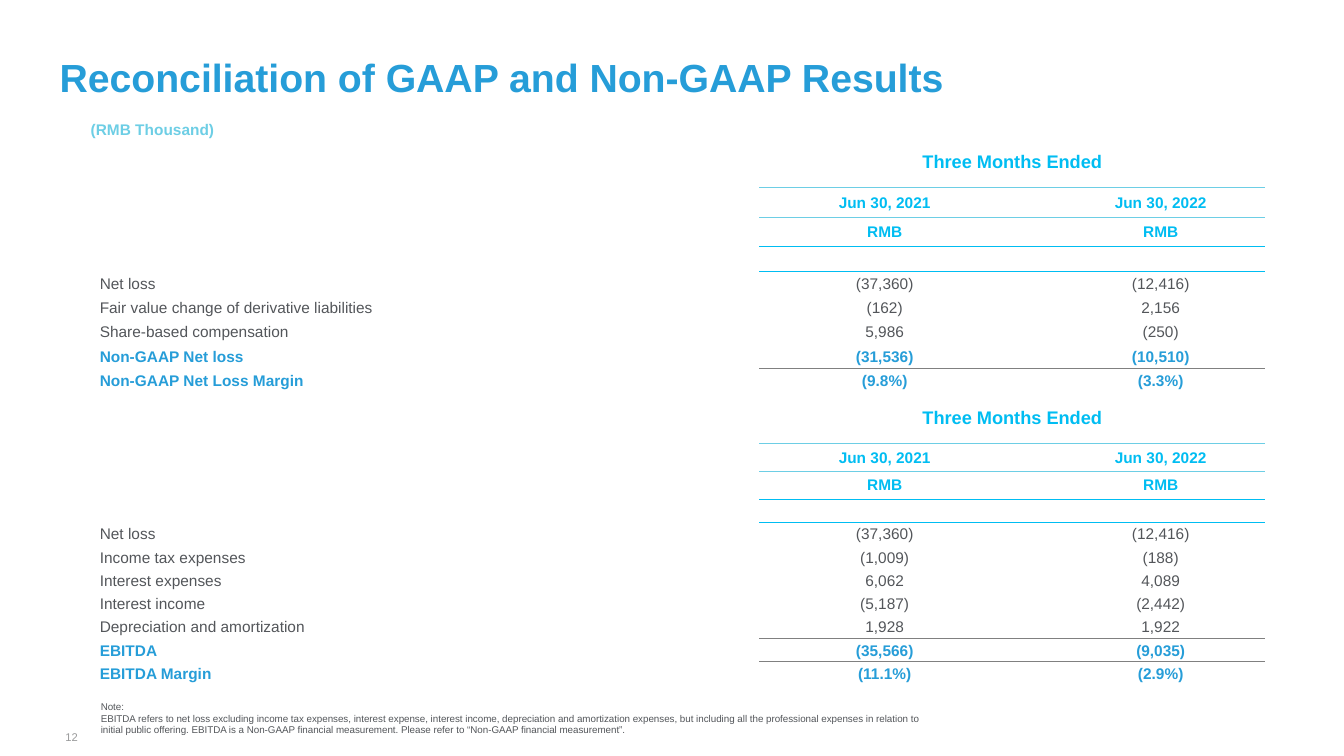
import lxml.etree
import pptx
import pptx.dml.color
import pptx.enum.text
import pptx.oxml
import pptx.oxml.ns
import pptx.util

WIDE, HIGH = 13.33, 7.5
BLUE, CYAN, PALE = "269DD8", "00BDF2", "6DCEE5"
DARK, GREY, RULE = "53565A", "999A9B", "808080"
COLS = (54.1, 2.8, 21.4, 3.9, 17.8)
HEADS = (1.2, 0.95, 1.2, 1.2, 1)
PLAIN = "{2D5ABB26-0587-4C30-8999-92F81FD0307C}"
LEFT = pptx.enum.text.PP_ALIGN.LEFT
MID = pptx.enum.text.PP_ALIGN.CENTER
RIGHT = pptx.enum.text.PP_ALIGN.RIGHT
TOP = pptx.enum.text.MSO_ANCHOR.TOP
HALF = pptx.enum.text.MSO_ANCHOR.MIDDLE
NOTE = (
    "Note:",
    "EBITDA refers to net loss excluding income tax expenses, interest expense, "
    "interest income, depreciation and amortization expenses, but including all the "
    "professional expenses in relation to initial public offering. EBITDA is a "
    "Non-GAAP financial measurement. Please refer to “Non-GAAP financial measurement”.",
)
LOSS = (
    ("Net loss", "(37,360)", "(12,416)"),
    ("Fair value change of derivative liabilities", "(162)", "2,156"),
    ("Share-based compensation", "5,986", "(250)"),
    ("Non-GAAP Net loss", "(31,536)", "(10,510)"),
    ("Non-GAAP Net Loss Margin", "(9.8%)", "(3.3%)"),
)
EARN = (
    ("Net loss", "(37,360)", "(12,416)"),
    ("Income tax expenses", "(1,009)", "(188)"),
    ("Interest expenses", "6,062", "4,089"),
    ("Interest income", "(5,187)", "(2,442)"),
    ("Depreciation and amortization", "1,928", "1,922"),
    ("EBITDA", "(35,566)", "(9,035)"),
    ("EBITDA Margin", "(11.1%)", "(2.9%)"),
)


def across(share):
    """Turn a percentage of the slide width into a length."""
    return pptx.util.Inches(WIDE * share / 100)


def down(share):
    """Turn a percentage of the slide height into a length."""
    return pptx.util.Inches(HIGH * share / 100)


def tint(color, code):
    """Apply a hex colour."""
    color.rgb = pptx.dml.color.RGBColor.from_string(code)


def write(para, text, size, code, bold=False, align=LEFT):
    """Add one styled run to a paragraph."""
    para.alignment = align
    run = para.add_run()
    run.text = text
    run.font.name = "Arial"
    run.font.size = pptx.util.Pt(size)
    run.font.bold = bold
    tint(run.font.color, code)


def fit(frame, anchor=TOP, inset=0):
    """Set wrapping, anchor and insets of a text frame."""
    frame.word_wrap = True
    frame.auto_size = pptx.enum.text.MSO_AUTO_SIZE.NONE
    frame.vertical_anchor = anchor
    frame.margin_left = frame.margin_right = pptx.util.Inches(inset)
    frame.margin_top = frame.margin_bottom = 0


def head(slide, text):
    """Fill and place the title."""
    title = slide.shapes.title
    title.left, title.top = across(4.43), down(7.07)
    title.width, title.height = across(78.77), down(6.27)
    fit(title.text_frame)
    write(title.text_frame.paragraphs[0], text, 28, BLUE, True)


def label(slide, place, lines, size, code, bold=False, align=LEFT, anchor=TOP, inset=0):
    """Add a text box with one paragraph per line."""
    x, y, w, h = place
    box = slide.shapes.add_textbox(across(x), down(y), across(w), down(h))
    fit(box.text_frame, anchor, inset)
    for i, line in enumerate(lines):
        para = box.text_frame.add_paragraph() if i else box.text_frame.paragraphs[0]
        write(para, line, size, code, bold, align)


def edge(cell, side, code, width):
    """Draw one border of a cell."""
    props = cell._tc.get_or_add_tcPr()
    line = pptx.oxml.parse_xml(
        f'<a:{side} {pptx.oxml.ns.nsdecls("a")} w="{pptx.util.Pt(width)}">'
        f'<a:solidFill><a:srgbClr val="{code}"/></a:solidFill></a:{side}>'
    )
    props.insert(0, line)


def rule(table, row, cols, code, width):
    """Draw a line below a row across some columns."""
    for col in cols:
        edge(table.cell(row, col), "lnB", code, width)
        edge(table.cell(row + 1, col), "lnT", code, width)


def clear(cell):
    """Strip the fill and trim the insets of a cell."""
    cell.fill.background()
    cell.vertical_anchor = HALF
    cell.margin_left = cell.margin_right = cell.margin_top = pptx.util.Inches(0.01)
    cell.margin_bottom = 0


def fill(table, row, col, text, size, code, bold, align=MID):
    """Write text in a cell."""
    write(table.cell(row, col).text_frame.paragraphs[0], text, size, code, bold, align)


def sheet(slide, top, pitch, data, strong, split):
    """Build one results table with its heading rows and lines."""
    spans = HEADS + (1,) * len(data)
    wide = 87.4
    frame = slide.shapes.add_table(
        len(spans), len(COLS), across(6.75), down(top), across(wide), down(pitch * sum(spans))
    )
    table = frame.table
    table.first_row = table.horz_banding = False
    table._tbl.tblPr.find(pptx.oxml.ns.qn("a:tableStyleId")).text = PLAIN
    for col, share in zip(table.columns, COLS):
        col.width = across(wide * share / 100)
    for row, span in zip(table.rows, spans):
        row.height = down(pitch * span)
    for cell in table.iter_cells():
        clear(cell)
    table.cell(0, 0).merge(table.cell(1, 0))
    table.cell(0, 2).merge(table.cell(1, 4))
    fill(table, 0, 2, "Three Months Ended", 13, CYAN, True)
    for col, year in ((2, "2021"), (4, "2022")):
        fill(table, 2, col, f"Jun 30, {year}", 11, CYAN, True)
        fill(table, 3, col, "RMB", 11, CYAN, True)
    for i, (name, *sums) in enumerate(data):
        row, bold = len(HEADS) + i, i >= strong
        code = BLUE if bold else DARK
        table.cell(row, 0).margin_left = pptx.util.Inches(0.09)
        fill(table, row, 0, name, 11, code, bold, LEFT)
        for col, text in zip((2, 4), sums):
            fill(table, row, col, text, 11, code, bold)
    for cell in table.iter_cells():
        para = cell.text_frame.paragraphs[0]
        if not para.runs:
            lxml.etree.SubElement(para._p, pptx.oxml.ns.qn("a:endParaRPr"), sz="800")
    rule(table, len(HEADS) + split, (2, 3, 4), RULE, 1)
    rule(table, 3, (2, 3, 4), CYAN, 0.5)
    rule(table, 2, (2, 4), PALE, 0.75)
    rule(table, 1, (2, 3, 4), PALE, 0.75)
    edge(table.cell(0, 2), "lnB", PALE, 0.75)


def main():
    """Build the slide and save it."""
    deck = pptx.Presentation()
    deck.slide_width, deck.slide_height = across(100), down(100)
    slide = deck.slides.add_slide(deck.slide_layouts[5])
    head(slide, "Reconciliation of GAAP and Non-GAAP Results")
    label(slide, (6.75, 15.87, 10.28, 2.53), ("(RMB Thousand)",), 11, PALE, True)
    sheet(slide, 17.87, 3.24, LOSS, 3, 3)
    sheet(slide, 52, 3.08, EARN, 5, 4)
    label(slide, (7.5, 92.67, 62.57, 4.67), NOTE, 7, DARK)
    label(slide, (4.05, 96.4, 2.48, 2.13), ("12",), 8, GREY, False, RIGHT, HALF, 0.1)
    deck.save("out.pptx")


if __name__ == "__main__":
    main()
